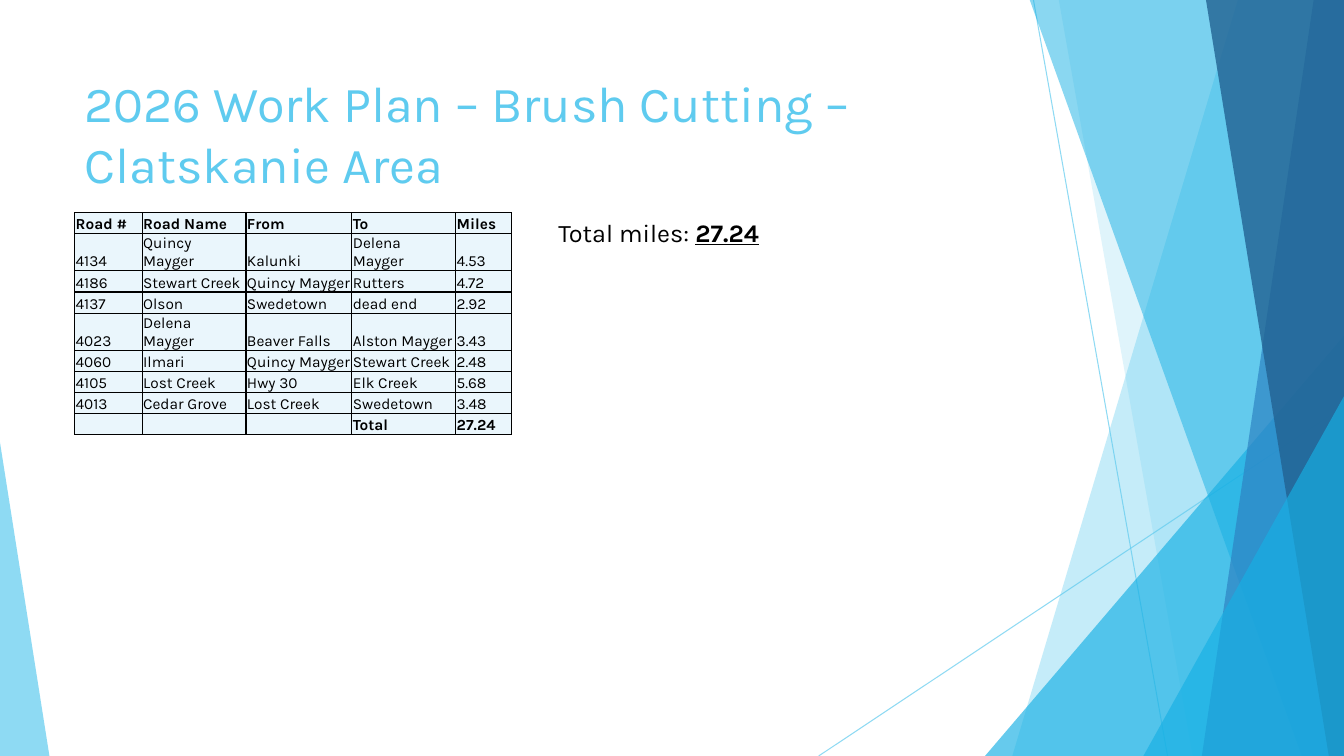
import dataclasses
import typing

import lxml.etree
import pptx
import pptx.dml.color
import pptx.enum.dml
import pptx.enum.shapes
import pptx.enum.text
import pptx.oxml.ns
import pptx.util

Inches = pptx.util.Inches
Pt = pptx.util.Pt
qn = pptx.oxml.ns.qn
Point = tuple[float, float]

HUES = {
    "sky": "5FCBEF", "cyan": "17B0E4", "blue": "2E83C3", "navy": "226292",
    "pale": "EAF6FC", "black": "000000",
}
WIDE, TALL, TOP = 13.33, 7.5, -0.01
FONT = "Karla"


@dataclasses.dataclass
class Ray:
    start: Point
    end: Point


@dataclasses.dataclass
class Band:
    top: float
    base: float
    hue: str
    alpha: int


@dataclasses.dataclass
class Wedge:
    left: float
    top: float
    width: float
    tip: float
    hue: str
    alpha: int


RAYS = [Ray((10.25, 0), (11.58, TALL)), Ray((WIDE, 4.03), (8.12, TALL))]
DECOR = [
    Band(12.28, 10.04, "sky", 36),
    Band(10.5, 11.83, "sky", 20),
    Wedge(9.77, 3.33, 3.56, 1, "cyan", 66),
    Band(10.21, 12.91, "cyan", 50),
    Band(13.03, 11.92, "blue", 70),
    Band(11.96, 13.18, "navy", 80),
    Wedge(11.34, 3.93, 1.99, 1, "cyan", 66),
    Wedge(0, 4.39, 0.49, 0, "sky", 70),
]
COLS = [0.67, 1.03, 1.05, 1.03, 0.55]
ROADS = [
    ("Road #", "Road Name", "From", "To", "Miles"),
    ("4134", "Quincy Mayger", "Kalunki", "Delena Mayger", "4.53"),
    ("4186", "Stewart Creek", "Quincy Mayger", "Rutters", "4.72"),
    ("4137", "Olson", "Swedetown", "dead end", "2.92"),
    ("4023", "Delena Mayger", "Beaver Falls", "Alston Mayger", "3.43"),
    ("4060", "Ilmari", "Quincy Mayger", "Stewart Creek", "2.48"),
    ("4105", "Lost Creek", "Hwy 30", "Elk Creek", "5.68"),
    ("4013", "Cedar Grove", "Lost Creek", "Swedetown", "3.48"),
    ("", "", "", "Total", "27.24"),
]


def apply(thing: typing.Any, form: dict[str, typing.Any]) -> None:
    for name, value in form.items():
        setattr(thing, name, value)


def tint(hue: str) -> pptx.dml.color.RGBColor:
    return pptx.dml.color.RGBColor.from_string(HUES[hue])


def paint(fill: typing.Any, hue: str, alpha: int = 100) -> None:
    fill.solid()
    fill.fore_color.rgb = tint(hue)
    if alpha < 100:
        color = fill._xPr.find(".//" + qn("a:srgbClr"))
        lxml.etree.SubElement(color, qn("a:alpha"), val=str(alpha * 1000))


def write(para: typing.Any, text: str, size: float, hue: str, **form: bool) -> None:
    run = para.add_run()
    run.text = text
    apply(run.font, {"name": FONT, "size": Pt(size), **form})
    run.font.color.rgb = tint(hue)


def draw_ray(shapes: typing.Any, ray: Ray) -> None:
    ends = [Inches(value) for value in ray.start + ray.end]
    line = shapes.add_connector(pptx.enum.shapes.MSO_CONNECTOR.STRAIGHT, *ends)
    line.line.width = Pt(0.75)
    paint(line.line.fill, "sky", 70)
    lxml.etree.SubElement(line._element.spPr, qn("a:effectLst"))


def draw_part(shapes: typing.Any, part: Band | Wedge) -> None:
    if isinstance(part, Band):
        edge = [(WIDE, TOP), (WIDE, TALL), (part.base, TALL)]
        path = shapes.build_freeform(Inches(part.top), Inches(TOP))
        path.add_line_segments([(Inches(x), Inches(y)) for x, y in edge], close=True)
        shape = path.convert_to_shape()
    else:
        shape = shapes.add_shape(
            pptx.enum.shapes.MSO_SHAPE.ISOSCELES_TRIANGLE,
            Inches(part.left), Inches(part.top),
            Inches(part.width), Inches(TALL - part.top),
        )
        shape.adjustments[0] = part.tip
    paint(shape.fill, part.hue, part.alpha)
    shape.line.fill.background()
    shape.shadow.inherit = False


def fill_cell(cell: typing.Any, text: str, bold: bool) -> None:
    apply(cell, {
        "margin_left": Inches(0.01), "margin_top": Inches(0.01),
        "margin_right": Inches(0.01), "margin_bottom": 0,
        "vertical_anchor": pptx.enum.text.MSO_ANCHOR.BOTTOM,
    })
    para = cell.text_frame.paragraphs[0]
    if text:
        write(para, text, 11, "black", bold=bold)
    else:
        lxml.etree.SubElement(para._p, qn("a:endParaRPr"), sz="1100")
    props = cell._tc.get_or_add_tcPr()
    for side in ("a:lnL", "a:lnR", "a:lnT", "a:lnB"):
        edge = lxml.etree.SubElement(props, qn(side), w=str(Pt(1)))
        solid = lxml.etree.SubElement(edge, qn("a:solidFill"))
        lxml.etree.SubElement(solid, qn("a:srgbClr"), val=HUES["black"])
    paint(cell.fill, "pale")


def draw_roads(shapes: typing.Any) -> None:
    frame = shapes.add_table(
        len(ROADS), len(COLS), Inches(0.74), Inches(2.11), Inches(sum(COLS)), Inches(1.89)
    )
    table = frame.table
    apply(table, {"first_row": False, "horz_banding": False})
    for col, width in zip(table.columns, COLS):
        col.width = Inches(width)
    for r, road in enumerate(ROADS):
        table.rows[r].height = Inches(0.21)
        for c, text in enumerate(road):
            fill_cell(table.cell(r, c), text, r in (0, len(ROADS) - 1))


def main() -> None:
    deck = pptx.Presentation()
    apply(deck, {"slide_width": Inches(WIDE), "slide_height": Inches(TALL)})
    slide = deck.slides.add_slide(deck.slide_layouts[5])
    shapes = slide.shapes
    for ray in RAYS:
        draw_ray(shapes, ray)
    for part in DECOR:
        draw_part(shapes, part)

    title = shapes.title
    apply(title, {
        "left": Inches(0.74), "top": Inches(0.67),
        "width": Inches(9.4), "height": Inches(1.44),
    })
    apply(title.text_frame, {
        "word_wrap": True,
        "auto_size": pptx.enum.text.MSO_AUTO_SIZE.NONE,
        "vertical_anchor": pptx.enum.text.MSO_ANCHOR.TOP,
    })
    para = title.text_frame.paragraphs[0]
    para.alignment = pptx.enum.text.PP_ALIGN.LEFT
    write(para, "2026 Work Plan – Brush Cutting –", 36, "sky")
    para.add_line_break()
    write(para, "Clatskanie Area", 36, "sky")
    shapes._spTree.append(title._element)

    draw_roads(shapes)

    box = shapes.add_textbox(Inches(5.44), Inches(2.11), Inches(2.3), Inches(0.4))
    apply(box.text_frame, {
        "word_wrap": True,
        "auto_size": pptx.enum.text.MSO_AUTO_SIZE.SHAPE_TO_FIT_TEXT,
    })
    total = box.text_frame.paragraphs[0]
    write(total, "Total miles: ", 18, "black")
    write(total, "27.24", 18, "black", bold=True, underline=True)
    deck.save("out.pptx")


if __name__ == "__main__":
    main()
